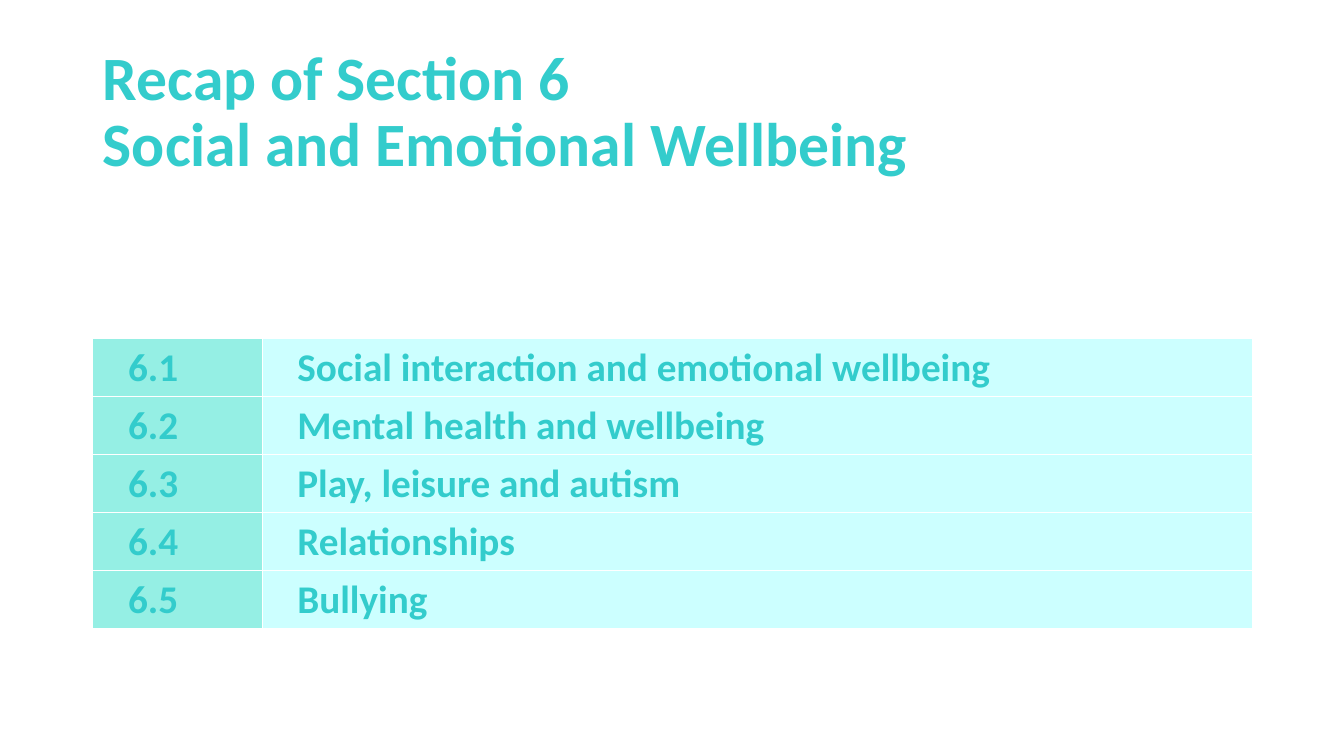
import lxml.etree
import pptx
import pptx.dml.color
import pptx.enum.text
import pptx.oxml.ns
import pptx.util

COLOURS = {
    "text": "33CCCC",
    "number": "95EFE4",
    "topic": "CCFFFF",
    "border": "FFFFFF",
}
SECTIONS = [
    ("6.1", "Social interaction and emotional wellbeing"),
    ("6.2", "Mental health and wellbeing"),
    ("6.3", "Play, leisure and autism"),
    ("6.4", "Relationships"),
    ("6.5", "Bullying"),
]
WIDTH, HEIGHT = 13.33, 7.5
LEFT, SPAN = 0.92 / WIDTH, 11.5 / WIDTH  # shares of the slide's width


def rgb(name):
    return pptx.dml.color.RGBColor.from_string(COLOURS[name])


class RecapSlide:
    font = "Calibri"

    def __init__(self, deck):
        self.deck = deck
        self.slide = deck.slides.add_slide(deck.slide_layouts[5])

    def box(self, left, top, width, height):
        """Turn shares of the slide into lengths."""
        across, down = self.deck.slide_width, self.deck.slide_height
        return round(left * across), round(top * down), round(width * across), round(height * down)

    def style(self, paragraph, size):
        paragraph.alignment = pptx.enum.text.PP_ALIGN.LEFT
        for run in paragraph.runs:
            run.font.name = self.font
            run.font.size = pptx.util.Pt(size)
            run.font.bold = True
            run.font.color.rgb = rgb("text")

    def title(self, lines, place, size):
        heading = self.slide.shapes.title
        heading.left, heading.top, heading.width, heading.height = self.box(*place)
        frame = heading.text_frame
        frame.auto_size = pptx.enum.text.MSO_AUTO_SIZE.NONE
        frame.vertical_anchor = pptx.enum.text.MSO_ANCHOR.MIDDLE
        frame.text = "\v".join(lines)
        frame.paragraphs[0].line_spacing = 0.9
        self.style(frame.paragraphs[0], size)

    def borders(self, cell, points):
        properties = cell._tc.get_or_add_tcPr()
        qn = pptx.oxml.ns.qn
        for side in ("lnL", "lnR", "lnT", "lnB"):
            line = lxml.etree.SubElement(properties, qn(f"a:{side}"), w=str(pptx.util.Pt(points)))
            fill = lxml.etree.SubElement(line, qn("a:solidFill"))
            lxml.etree.SubElement(fill, qn("a:srgbClr"), val=COLOURS["border"])

    def cell(self, cell, text, fill, size):
        self.borders(cell, 1)
        cell.fill.solid()
        cell.fill.fore_color.rgb = rgb(fill)
        cell.text_frame.text = text
        paragraph = cell.text_frame.paragraphs[0]
        indent = paragraph._p.get_or_add_pPr()
        indent.set("marL", str(pptx.util.Inches(0.25)))
        indent.set("indent", "0")
        self.style(paragraph, size)

    def table(self, rows, place, number_width, size):
        table = self.slide.shapes.add_table(len(rows), 2, *self.box(*place)).table
        table.first_row = table.horz_banding = False
        total = self.box(*place)[2]
        table.columns[0].width = round(number_width * self.deck.slide_width)
        table.columns[1].width = total - table.columns[0].width
        for row, texts in enumerate(rows):
            for column, (text, fill) in enumerate(zip(texts, ("number", "topic"))):
                self.cell(table.cell(row, column), text, fill, size)


def main():
    deck = pptx.Presentation()
    deck.slide_width = pptx.util.Inches(WIDTH)
    deck.slide_height = pptx.util.Inches(HEIGHT)
    recap = RecapSlide(deck)

    # Heading
    recap.title(
        ["Recap of Section 6", "Social and Emotional Wellbeing"],
        (LEFT, 0.4 / HEIGHT, SPAN, 1.45 / HEIGHT),
        44,
    )

    # Section list, with equal rows
    row_height = 0.57 / HEIGHT
    recap.table(
        SECTIONS,
        (LEFT, 3.36 / HEIGHT, SPAN, row_height * len(SECTIONS)),
        1.68 / WIDTH,
        28,
    )
    deck.save("out.pptx")


if __name__ == "__main__":
    main()
